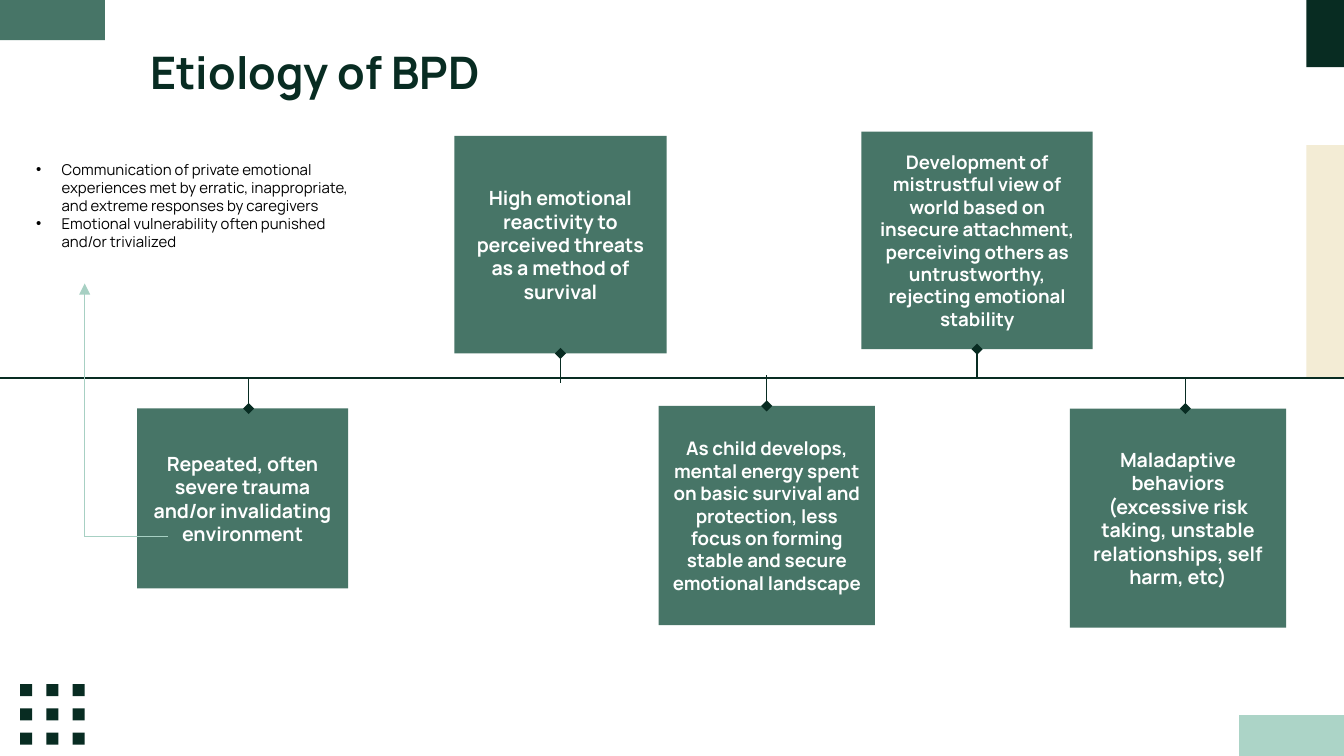
"""Build the "Etiology of BPD" timeline slide."""
from lxml import etree
from pptx import Presentation
from pptx.dml.color import RGBColor
from pptx.enum.shapes import MSO_CONNECTOR, MSO_SHAPE
from pptx.enum.text import MSO_ANCHOR, PP_ALIGN
from pptx.oxml.ns import qn
from pptx.util import Inches, Pt

RECTANGLE = MSO_SHAPE.RECTANGLE
STRAIGHT = MSO_CONNECTOR.STRAIGHT
MIDDLE = MSO_ANCHOR.MIDDLE
CENTER = PP_ALIGN.CENTER

DARK = RGBColor(0x08, 0x2C, 0x22)
GREEN = RGBColor(0x47, 0x75, 0x67)
MINT = RGBColor(0xAC, 0xD4, 0xC7)
ARROW_MINT = RGBColor(0xA7, 0xD0, 0xC3)
CREAM = RGBColor(0xF3, 0xEC, 0xD5)
WHITE = RGBColor(0xFF, 0xFF, 0xFF)
BLACK = RGBColor(0x00, 0x00, 0x00)
FONT = "Manrope"

WIDTH = Inches(10)
HEIGHT = WIDTH * 9 // 16
COLUMN = WIDTH / 100
ROW = HEIGHT / 100
TIMELINE = 50

presentation = Presentation()
presentation.slide_width = WIDTH
presentation.slide_height = HEIGHT
slide = presentation.slides.add_slide(presentation.slide_layouts[6])
shapes = slide.shapes


def add_block(left, top, width, height, color):
    block = shapes.add_shape(
        RECTANGLE, int(left * COLUMN), int(top * ROW), int(width * COLUMN), int(height * ROW)
    )
    block.shadow.inherit = False
    block.fill.solid()
    block.fill.fore_color.rgb = color
    block.line.fill.background()
    return block


def add_line(x1, y1, x2, y2, color, head=None, tail=None):
    line = shapes.add_connector(
        STRAIGHT, int(x1 * COLUMN), int(y1 * ROW), int(x2 * COLUMN), int(y2 * ROW)
    )
    line.line.color.rgb = color
    line.line.width = Pt(0.75)
    outline = line.line._get_or_add_ln()
    for tag, kind in (("a:headEnd", head), ("a:tailEnd", tail)):
        if kind:
            etree.SubElement(outline, qn(tag), type=kind)
    etree.SubElement(line._element.spPr, qn("a:effectLst"))
    return line


for left, top, width, height, color in (
    (92.2, 94.6, 7.8, 5.4, MINT),
    (97.2, 0, 2.8, 8.89, DARK),
    (97.2, 19.2, 2.8, 30.7, CREAM),
    (0, 0, 7.8, 5.33, GREEN),
):
    add_block(left, top, width, height, color)

for dot_row in range(3):
    for dot_column in range(3):
        add_block(1.5 + 1.95 * dot_column, 90.5 + 3.2 * dot_row, 0.9, 1.6, DARK)

title = shapes.add_textbox(int(10.2 * COLUMN), int(3.9 * ROW), int(84.3 * COLUMN), int(11.2 * ROW))
title_frame = title.text_frame
title_frame.word_wrap = True
title_frame.vertical_anchor = MIDDLE
title_frame.margin_top = title_frame.margin_bottom = Inches(0.1)
title_frame.text = "Etiology of BPD"
title_font = title_frame.paragraphs[0].runs[0].font
title_font.name = FONT
title_font.size = Pt(24)
title_font.bold = True
title_font.color.rgb = DARK

add_line(0, TIMELINE, 100, TIMELINE, DARK)

stages = (
    (10.2, 54.04, 15.7, 23.8, 10.5, 18.5, TIMELINE,
     "Repeated, often severe trauma and/or invalidating environment"),
    (33.8, 17.96, 15.8, 28.8, 10.5, None, 50.7,
     "High emotional reactivity to perceived threats as a method of survival"),
    (49, 53.7, 16.1, 29, 10, None, 49.6,
     "As child develops, mental energy spent on basic survival and protection, "
     "less focus on forming stable and secure emotional landscape "),
    (64.1, 17.4, 17.2, 28.8, 10, None, TIMELINE,
     "Development of mistrustful view of world based on insecure attachment, "
     "perceiving others as untrustworthy, rejecting emotional stability"),
    (79.6, 54.04, 16.1, 29, 10.5, 88.2, TIMELINE,
     "Maladaptive behaviors (excessive risk taking, unstable relationships, self harm, etc)"),
)
for left, top, width, height, size, stem, stem_end, text in stages:
    box = add_block(left, top, width, height, GREEN)
    frame = box.text_frame
    frame.word_wrap = True
    frame.vertical_anchor = MIDDLE
    frame.margin_top = frame.margin_bottom = Inches(0.1)
    frame.text = text
    paragraph = frame.paragraphs[0]
    paragraph.alignment = CENTER
    font = paragraph.runs[0].font
    font.name = FONT
    font.size = Pt(size)
    font.bold = True
    font.color.rgb = WHITE

    above = top < TIMELINE
    stem_start = top + height if above else top
    stem_x = stem or left + width / 2
    connector = add_line(stem_x, stem_start, stem_x, stem_end, DARK, head="diamond")
    if stem is None:
        connector.begin_connect(box, 2 if above else 0)

notes = shapes.add_textbox(int(1.7 * COLUMN), int(20.4 * ROW), int(27.1 * COLUMN), int(16.2 * ROW))
notes_frame = notes.text_frame
notes_frame.word_wrap = True
notes_frame.text = (
    "Communication of private emotional experiences met by erratic, inappropriate, "
    "and extreme responses by caregivers\n"
    "Emotional vulnerability often punished and/or trivialized"
)
for paragraph in notes_frame.paragraphs:
    font = paragraph.runs[0].font
    font.name = FONT
    font.size = Pt(8)
    font.color.rgb = BLACK
    properties = paragraph._p.get_or_add_pPr()
    properties.set("marL", str(Inches(0.19)))
    properties.set("indent", str(-Inches(0.19)))
    etree.SubElement(properties, qn("a:buFont"), typeface="Arial")
    etree.SubElement(properties, qn("a:buChar"), char="•")

add_line(6.3, 71, 6.3, 37.5, ARROW_MINT, tail="triangle")
add_line(12.5, 71, 6.3, 71, ARROW_MINT)

presentation.save("out.pptx")
